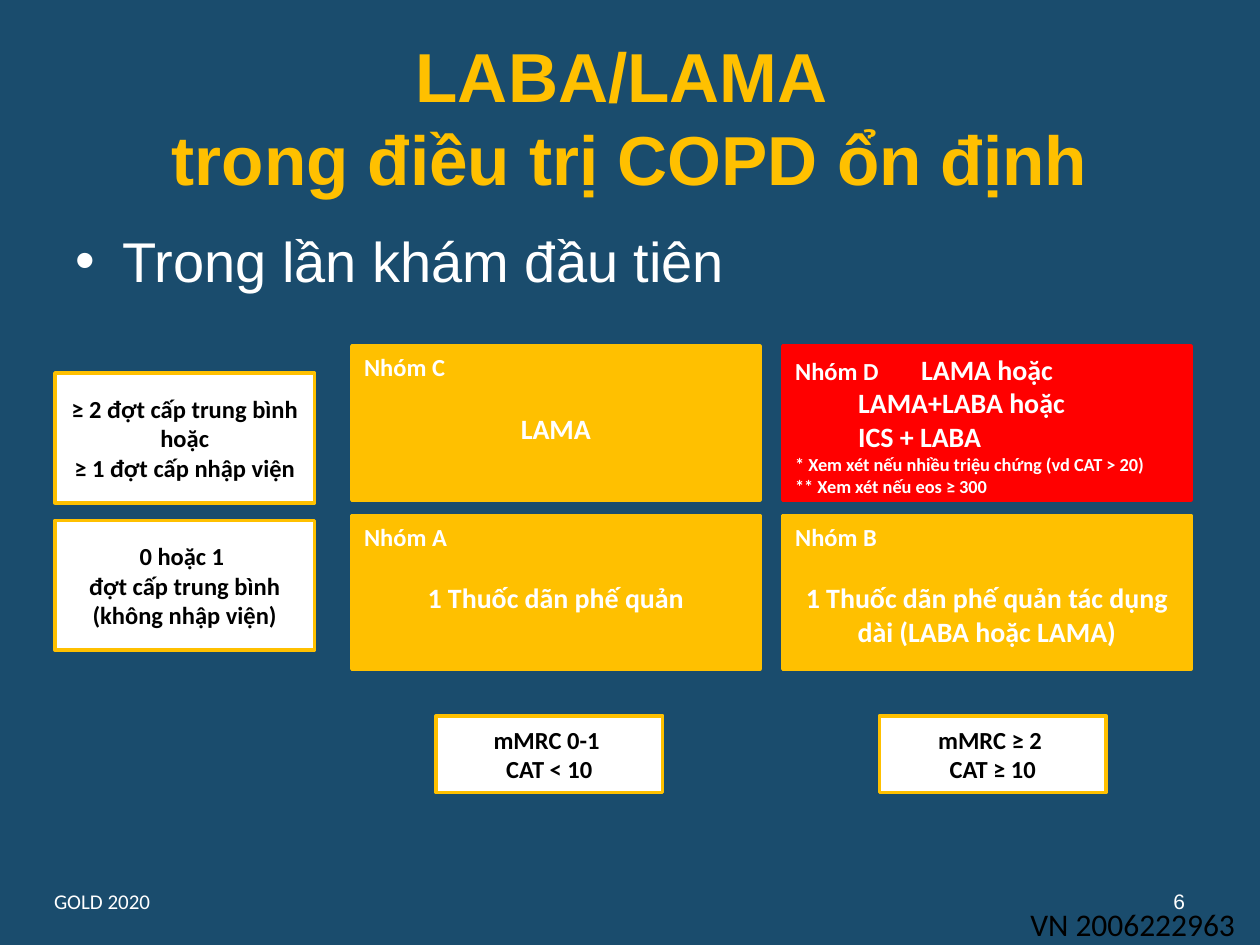
from dataclasses import dataclass

from lxml.etree import SubElement
from pptx import Presentation
from pptx.dml.color import RGBColor
from pptx.enum.shapes import MSO_SHAPE
from pptx.enum.text import MSO_ANCHOR as Anchor, MSO_AUTO_SIZE, PP_ALIGN as Align
from pptx.oxml.ns import qn
from pptx.util import Cm, Pt

COLORS = {
    "navy": "1A4C6D",
    "gold": "FFC000",
    "red": "FF0000",
    "white": "FFFFFF",
    "black": "000000",
}


@dataclass
class Line:
    text: str
    size: float = 14
    align: Align = Align.LEFT
    before: float = 0
    label: str = ""


@dataclass
class Box:
    left: float
    top: float
    width: float
    height: float
    lines: list[Line]
    fill: str = "white"
    border: str = "gold"
    color: str = "black"
    anchor: Anchor = Anchor.MIDDLE


@dataclass
class Note:
    left: float
    top: float
    width: float
    height: float
    text: str
    size: float
    font: str = "Calibri"
    color: str = "white"
    align: Align = Align.LEFT
    anchor: Anchor = Anchor.TOP


def rgb(name: str) -> RGBColor:
    return RGBColor.from_string(COLORS[name])


def style(r, size: float, font: str, color: str, bold: bool = False) -> None:
    r.font.size = Pt(size)
    r.font.name = font
    r.font.bold = bold
    r.font.color.rgb = rgb(color)


def draw_box(slide, box: Box) -> None:
    sp = slide.shapes.add_shape(
        MSO_SHAPE.RECTANGLE, Cm(box.left), Cm(box.top), Cm(box.width), Cm(box.height)
    )
    sp.shadow.inherit = False
    sp.fill.solid()
    sp.fill.fore_color.rgb = rgb(box.fill)
    sp.line.color.rgb = rgb(box.border)
    sp.line.width = Pt(2)
    tf = sp.text_frame
    tf.word_wrap = True
    tf.vertical_anchor = box.anchor
    for i, line in enumerate(box.lines):
        p = tf.add_paragraph() if i else tf.paragraphs[0]
        p.alignment = line.align
        if line.before:
            p.space_before = Pt(line.before)
        if line.label:
            r = p.add_run()
            r.text = line.label
            style(r, 14, "Calibri", box.color, True)
        r = p.add_run()
        r.text = line.text
        style(r, line.size, "Calibri", box.color, True)


def draw_note(slide, note: Note):
    sp = slide.shapes.add_textbox(
        Cm(note.left), Cm(note.top), Cm(note.width), Cm(note.height)
    )
    tf = sp.text_frame
    tf.word_wrap = True
    tf.vertical_anchor = note.anchor
    tf.text = note.text
    p = tf.paragraphs[0]
    p.alignment = note.align
    style(p.runs[0], note.size, note.font, note.color)
    return p


def add_bullet(p, indent: float) -> None:
    pPr = p._p.get_or_add_pPr()
    pPr.set("marL", str(Cm(indent)))
    pPr.set("indent", str(-Cm(indent)))
    SubElement(pPr, qn("a:buFont")).set("typeface", "Arial")
    SubElement(pPr, qn("a:buChar")).set("char", "•")


def centered(*texts: str) -> list[Line]:
    return [Line(text, align=Align.CENTER) for text in texts]


def therapy(group: str, drug: str) -> list[Line]:
    return [Line(group), Line(drug, 16, Align.CENTER, before=17)]


def group_box(col: int, row: int, lines: list[Line], fill: str = "gold") -> Box:
    return Box(7.09 + 8.69 * col, 6.98 + 3.41 * row, 8.23, 3.1,
               lines, fill, fill, "white", Anchor.TOP)


GROUP_D = [
    Line("LAMA hoặc", 16, label="Nhóm D\t"),
    Line("\tLAMA+LABA hoặc", 16),
    Line("\tICS + LABA", 16),
    Line("* Xem xét nếu nhiều triệu chứng (vd CAT > 20)", 10.5),
    Line("** Xem xét nếu eos ≥ 300", 10.5),
]
SYMPTOMS = [("mMRC 0-1 ", "CAT < 10"), ("mMRC ≥ 2 ", "CAT ≥ 10")]
EXACERBATIONS = [
    ("≥ 2 đợt cấp trung bình hoặc", "≥ 1 đợt cấp nhập viện"),
    ("0 hoặc 1 ", "đợt cấp trung bình", "(không nhập viện)"),
]
BOXES = [
    *(Box(8.79 + 8.94 * i, 14.43, 4.57, 1.55, centered(*texts))
      for i, texts in enumerate(SYMPTOMS)),
    *(Box(1.11, 7.52 + 2.97 * i, 5.23, 2.62, centered(*texts))
      for i, texts in enumerate(EXACERBATIONS)),
    group_box(0, 0, therapy("Nhóm C", "LAMA")),
    group_box(0, 1, therapy("Nhóm A", "1 Thuốc dãn phế quản")),
    group_box(1, 1, therapy("Nhóm B", "1 Thuốc dãn phế quản tác dụng dài (LABA hoặc LAMA)")),
    group_box(1, 0, GROUP_D, "red"),
]
BODY = Note(1.27, 4.45, 22.86, 12.57, "Trong lần khám đầu tiên", 32, "Arial")
NOTES = [
    Note(18.21, 17.65, 5.93, 1.02, "6", 12, "Arial",
         align=Align.RIGHT, anchor=Anchor.MIDDLE),
    Note(0.84, 17.78, 14.81, 0.76, "GOLD 2020", 12),
    Note(20.52, 18.11, 4.65, 1.02, "VN 2006222963", 18, color="black"),
]


def main() -> None:
    prs = Presentation()
    prs.slide_width, prs.slide_height = Cm(25.4), Cm(19.05)
    slide = prs.slides.add_slide(prs.slide_layouts[5])
    slide.background.fill.solid()
    slide.background.fill.fore_color.rgb = rgb("navy")

    title = slide.shapes.title
    title.left, title.top, title.width, title.height = Cm(1.27), Cm(0.76), Cm(22.86), Cm(3.18)
    tf = title.text_frame
    tf.text = "LABA/LAMA \vtrong điều trị COPD ổn định"
    tf.auto_size = MSO_AUTO_SIZE.NONE
    tf.vertical_anchor = Anchor.MIDDLE
    p = tf.paragraphs[0]
    p.alignment = Align.CENTER
    for r in p.runs:
        style(r, 39.6, "Arial", "gold", True)

    add_bullet(draw_note(slide, BODY), 0.95)
    for box in BOXES:
        draw_box(slide, box)
    for note in NOTES:
        draw_note(slide, note)
    prs.save("out.pptx")


if __name__ == "__main__":
    main()
